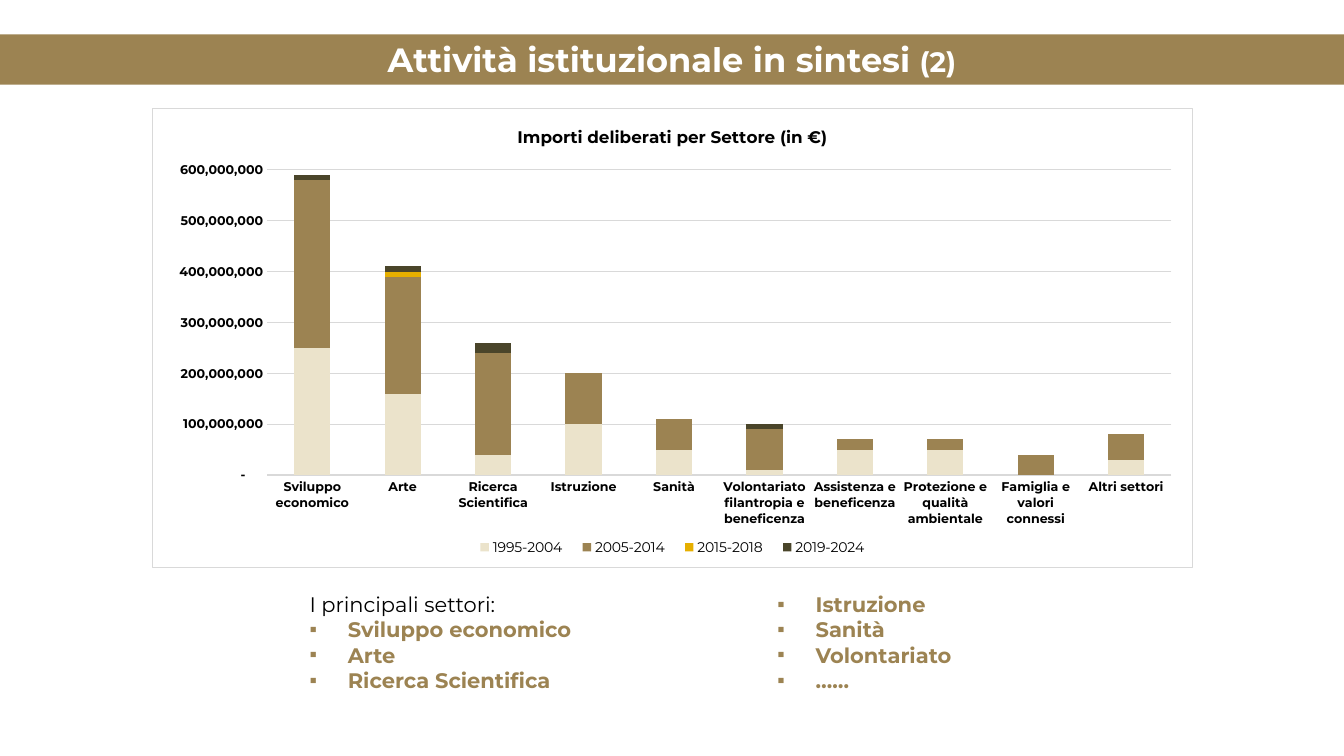
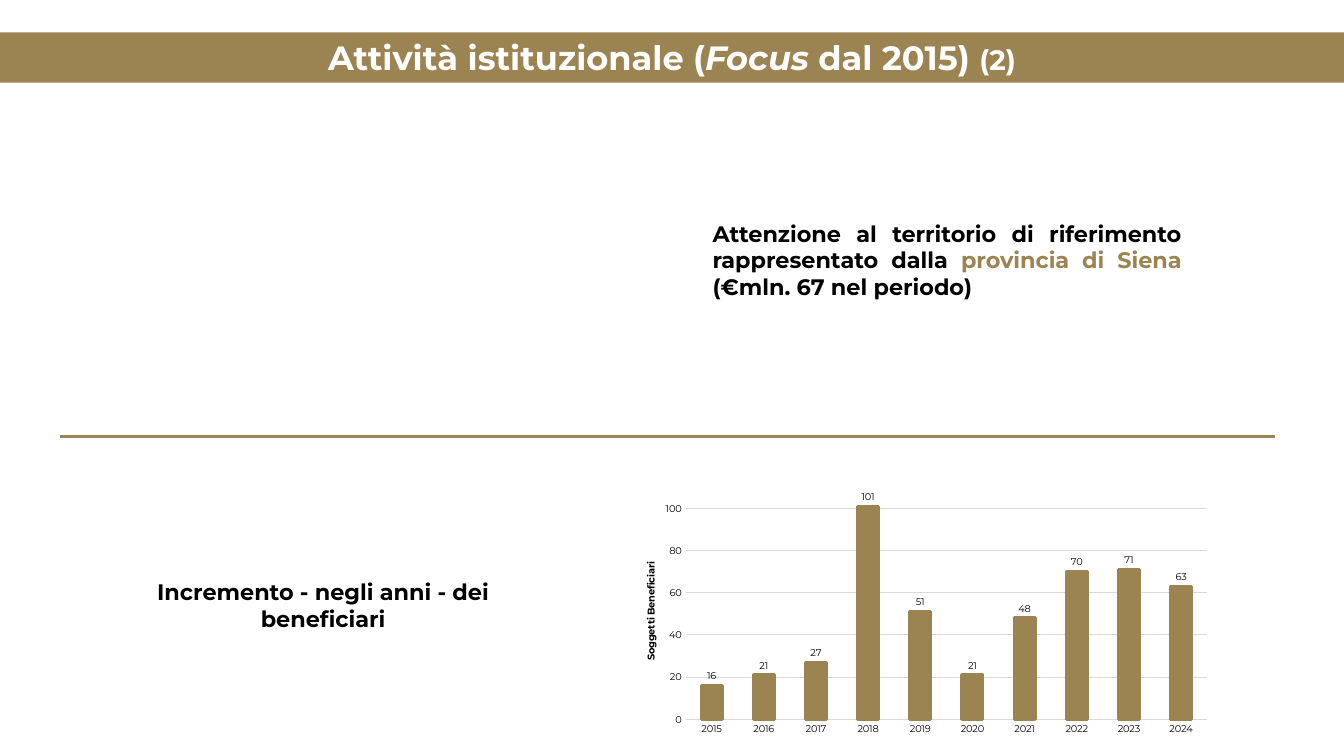
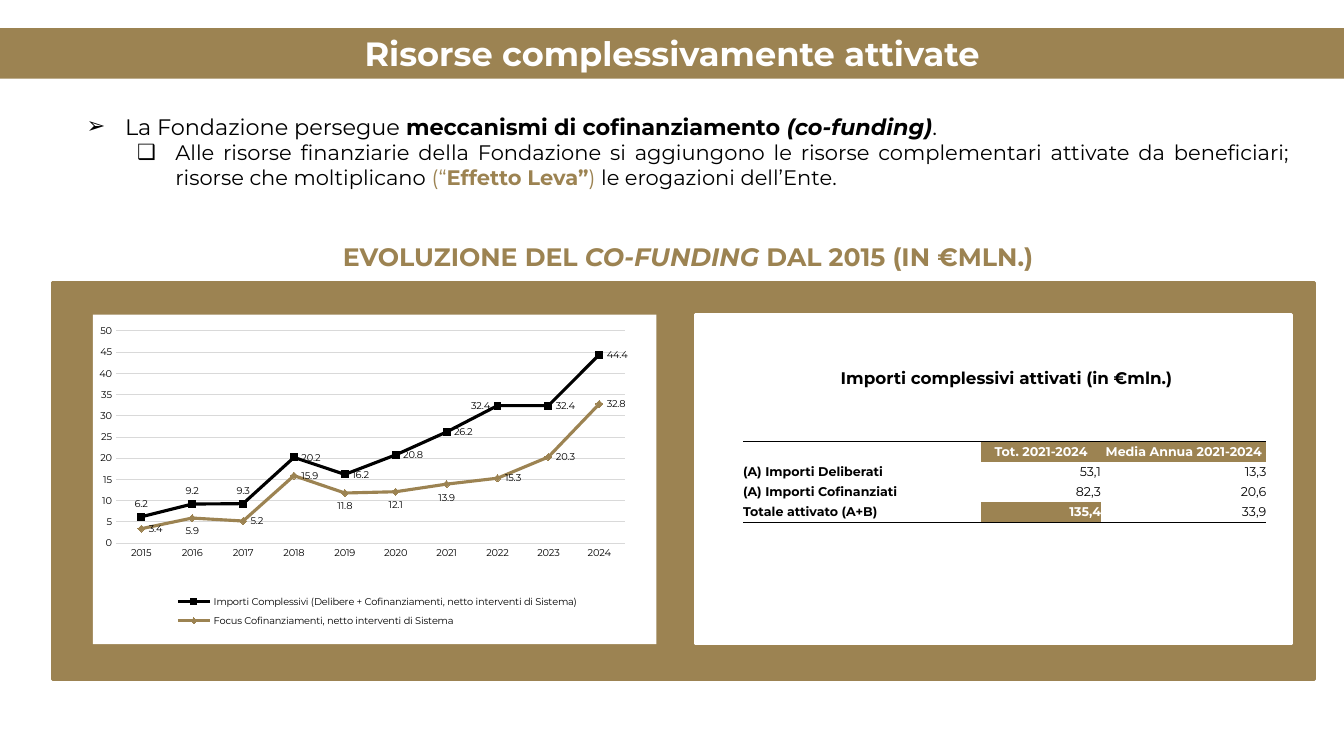
"""Build three slides on a foundation's grants, beneficiaries and co-funding."""
from lxml import etree
from pptx import Presentation
from pptx.chart.data import CategoryChartData
from pptx.dml.color import RGBColor
from pptx.enum.chart import XL_CHART_TYPE as Kind
from pptx.enum.chart import XL_LABEL_POSITION as Spot
from pptx.enum.chart import XL_LEGEND_POSITION as LegendSpot
from pptx.enum.chart import XL_MARKER_STYLE as Marker
from pptx.enum.chart import XL_TICK_MARK as Tick
from pptx.enum.shapes import MSO_CONNECTOR, MSO_SHAPE
from pptx.enum.text import MSO_ANCHOR as Anchor
from pptx.enum.text import MSO_AUTO_SIZE as AutoSize
from pptx.enum.text import PP_ALIGN as Align
from pptx.oxml import parse_xml
from pptx.oxml.ns import nsdecls, qn
from pptx.util import Inches, Pt

FONT = "Montserrat"
GOLD = RGBColor(0x9C, 0x83, 0x52)
CREAM = RGBColor(0xEB, 0xE3, 0xCB)
YELLOW = RGBColor(0xE6, 0xAF, 0x00)
DARK = RGBColor(0x4A, 0x45, 0x2A)
GREY = RGBColor(0xD9, 0xD9, 0xD9)
BLACK = RGBColor(0, 0, 0)
WHITE = RGBColor(0xFF, 0xFF, 0xFF)
YEARS = [str(year) for year in range(2015, 2025)]
PLAIN_TABLE = "{2D5ABB26-0587-4C30-8999-92F81FD0307C}"
LAYOUT = (
    "<c:layout %s><c:manualLayout>{target}"
    '<c:xMode val="edge"/><c:yMode val="edge"/><c:x val="{0}"/><c:y val="{1}"/>'
    '<c:w val="{2}"/><c:h val="{3}"/></c:manualLayout></c:layout>' % nsdecls("c")
)
INNER = '<c:layoutTarget val="inner"/>'
CHART_FILL = (
    '<c:spPr %s><a:solidFill><a:srgbClr val="FFFFFF"/></a:solidFill>'
    '<a:ln w="9525">{}</a:ln></c:spPr>' % nsdecls("c", "a")
)


def add_spans(para, size, spans):
    """Append runs given as text, colour, style letters and an optional size."""
    for text, colour, style, *other_size in spans:
        span = para.add_run()
        span.text = text
        span.font.name = FONT
        span.font.size = Pt(other_size[0] if other_size else size)
        span.font.color.rgb = colour
        span.font.bold = "b" in style
        span.font.italic = "i" in style


def add_styled_chart(page, kind, at, categories, series, size, plot_area, top, step, border="<a:noFill/>"):
    """Add a chart with the shared font, axes, gridlines and background."""
    data = CategoryChartData()
    data.categories = categories
    for name, values, _ in series:
        data.add_series(name, values)
    chart = page.shapes.add_chart(kind, *[Inches(n) for n in at], data).chart
    chart.has_title = False
    chart.has_legend = False
    chart.font.name = FONT
    chart.font.size = Pt(size)
    chart.font.color.rgb = BLACK
    chart.element.find(qn("c:chart")).addnext(parse_xml(CHART_FILL.format(border)))
    area = chart.element.find(".//" + qn("c:plotArea"))
    for old in area.findall(qn("c:layout")):
        area.remove(old)
    area.insert(0, parse_xml(LAYOUT.format(*plot_area, target=INNER)))
    for axis in (chart.category_axis, chart.value_axis):
        axis.major_tick_mark = Tick.NONE
        axis.minor_tick_mark = Tick.NONE
    chart.category_axis.format.line.color.rgb = GREY
    chart.category_axis.format.line.width = Pt(0.75)
    values_axis = chart.value_axis
    values_axis.minimum_scale = 0
    values_axis.maximum_scale = top
    values_axis.major_unit = step
    values_axis.format.line.fill.background()
    values_axis.major_gridlines.format.line.color.rgb = GREY
    values_axis.major_gridlines.format.line.width = Pt(0.75)
    values_axis.tick_labels.number_format = "#,##0"
    values_axis.tick_labels.number_format_is_linked = False
    chart.plots[0].vary_by_categories = False
    return chart


deck = Presentation()
deck.slide_width = Inches(13.33)
deck.slide_height = Inches(7.5)
sectors, focus, resources = [deck.slides.add_slide(deck.slide_layouts[n]) for n in (3, 5, 1)]

titles = [
    (sectors, 0.34, [("Attività istituzionale in sintesi ", WHITE, "b"), ("(2)", WHITE, "b", 20)]),
    (focus, 0.32, [
        ("Attività istituzionale (", WHITE, "b"), ("Focus", WHITE, "bi"),
        (" dal 2015) ", WHITE, "b"), ("(2)", WHITE, "b", 20),
    ]),
    (resources, 0.28, [("Risorse complessivamente attivate", WHITE, "b")]),
]
for page, top, spans in titles:
    band = page.shapes.title
    band.left, band.top, band.width, band.height = 0, Inches(top), deck.slide_width, Inches(0.5)
    band.fill.solid()
    band.fill.fore_color.rgb = GOLD
    band.text_frame.auto_size = AutoSize.NONE
    band.text_frame.vertical_anchor = Anchor.MIDDLE
    para = band.text_frame.paragraphs[0]
    para.alignment = Align.CENTER
    add_spans(para, 24, spans)

left_items = [("", 0, 15, [("I principali settori:", BLACK, "")])]
left_items += [("▪", 0, 15, [(name, GOLD, "b")]) for name in ("Sviluppo economico", "Arte", "Ricerca Scientifica")]
right_items = [("▪", 0, 15, [(name, GOLD, "b")]) for name in ("Istruzione", "Sanità", "Volontariato", "……")]
funding_items = [
    ("➢", 0, 16, [
        ("La Fondazione persegue ", BLACK, ""), ("meccanismi di cofinanziamento ", BLACK, "b"),
        ("(co-funding)", BLACK, "bi"), (".", BLACK, ""),
    ]),
    ("❑", 1, 15, [
        ("Alle risorse finanziarie della Fondazione si aggiungono le risorse complementari attivate "
         "da beneficiari; risorse che moltiplicano ", BLACK, ""),
        ("(“", GOLD, ""), ("Effetto Leva”", GOLD, "b"), (") ", GOLD, ""),
        ("le erogazioni dell’Ente.", BLACK, ""),
    ]),
]
sector_list = sectors.placeholders[1]
sector_list.fill.solid()
sector_list.fill.fore_color.rgb = WHITE
lists = [
    (sector_list, (2.97, 5.82, 5.35, 1.36), Align.LEFT, left_items),
    (sectors.placeholders[2], (7.61, 5.82, 5, 1.36), Align.LEFT, right_items),
    (resources.placeholders[1], (0.76, 1.07, 12.13, 0.88), Align.JUSTIFY, funding_items),
]
for box, at, align, items in lists:
    box.left, box.top, box.width, box.height = [Inches(n) for n in at]
    frame = box.text_frame
    frame.auto_size = AutoSize.NONE
    for index, (bullet, level, size, spans) in enumerate(items):
        para = frame.add_paragraph() if index else frame.paragraphs[0]
        para.level = level
        para.alignment = align
        para.space_before = Pt(0)
        props = para._p.get_or_add_pPr()
        if bullet:
            props.set("marL", str(Inches(0.38 + 0.5 * level)))
            props.set("indent", str(Inches(-0.38)))
            etree.SubElement(props, qn("a:buFont"), typeface="Arial")
            etree.SubElement(props, qn("a:buChar"), char=bullet)
        else:
            props.set("marL", "0")
            props.set("indent", "0")
            etree.SubElement(props, qn("a:buNone"))
        add_spans(para, size, spans)

panels = [((0.52, 2.8, 12.52, 3.94), GOLD), ((6.9, 3.12, 5.91, 3.27), WHITE)]
for at, colour in panels:
    panel = resources.shapes.add_shape(MSO_SHAPE.RECTANGLE, *[Inches(n) for n in at])
    panel.shadow.inherit = False
    panel.fill.solid()
    panel.fill.fore_color.rgb = colour
    panel.line.color.rgb = colour
    panel.line.width = Pt(2)

captions = [
    (focus, (6.97, 2.13, 4.85, 0.91), Align.JUSTIFY, 16, [
        ("Attenzione al territorio di riferimento rappresentato dalla ", BLACK, "b"),
        ("provincia di Siena ", GOLD, "b"), ("(€mln. 67 nel periodo)", BLACK, "b"),
    ]),
    (focus, (0.92, 5.69, 4.57, 0.64), Align.CENTER, 16, [("Incremento - negli anni - dei beneficiari", BLACK, "b")]),
    (resources, (1.39, 2.34, 10.87, 0.4), Align.CENTER, 18, [
        ("EVOLUZIONE DEL ", GOLD, "b"), ("CO-FUNDING", GOLD, "bi"), (" DAL 2015 (IN €MLN.)", GOLD, "b"),
    ]),
    (resources, (8.24, 3.6, 3.57, 0.3), Align.LEFT, 12, [("Importi complessivi attivati (in €mln.)", BLACK, "b")]),
]
for page, at, align, size, spans in captions:
    box = page.shapes.add_textbox(*[Inches(n) for n in at])
    box.text_frame.word_wrap = True
    para = box.text_frame.paragraphs[0]
    para.alignment = align
    add_spans(para, size, spans)

divider = focus.shapes.add_connector(
    MSO_CONNECTOR.STRAIGHT, Inches(0.6), Inches(4.33), Inches(12.65), Inches(4.33))
divider.line.color.rgb = GOLD
divider.line.width = Pt(2.5)
etree.SubElement(divider._element.spPr, qn("a:effectLst"))

TEN_MILLION = 10_000_000
sector_names = [
    "Sviluppo economico", "Arte", "Ricerca Scientifica", "Istruzione", "Sanità",
    "Volontariato filantropia e beneficenza", "Assistenza e beneficenza",
    "Protezione e qualità ambientale", "Famiglia e valori connessi", "Altri settori",
]
periods = [
    ("1995-2004", (25, 16, 4, 10, 5, 1, 5, 5, 0, 3), CREAM),
    ("2005-2014", (33, 23, 20, 10, 6, 8, 2, 2, 4, 5), GOLD),
    ("2015-2018", (0, 1, 0, 0, 0, 0, 0, 0, 0, 0), YELLOW),
    ("2019-2024", (1, 1, 2, 0, 0, 1, 0, 0, 0, 0), DARK),
]
amounts = [(name, [n * TEN_MILLION for n in values], colour) for name, values, colour in periods]
sector_chart = add_styled_chart(
    sectors, Kind.COLUMN_STACKED, (1.51, 1.07, 10.32, 4.57), sector_names, amounts, 10,
    (0.11, 0.134, 0.87, 0.664), 60 * TEN_MILLION, 10 * TEN_MILLION,
    '<a:solidFill><a:srgbClr val="D9D9D9"/></a:solidFill>')
sector_chart.has_title = True
add_spans(sector_chart.chart_title.text_frame.paragraphs[0], 12,
          [("Importi deliberati per Settore (in €)", BLACK, "b")])
sector_chart.chart_title.include_in_layout = False
sector_chart.value_axis.tick_labels.number_format = '#,##0;-#,##0;"-"??'
for axis in (sector_chart.category_axis, sector_chart.value_axis):
    axis.tick_labels.font.size = Pt(9)
    axis.tick_labels.font.bold = True
sector_chart.plots[0].gap_width = 150
sector_chart.plots[0].overlap = 100
for bars, (_, _, colour) in zip(sector_chart.series, amounts):
    bars.format.fill.solid()
    bars.format.fill.fore_color.rgb = colour

beneficiaries = [("Soggetti Beneficiari", (16, 21, 27, 101, 51, 21, 48, 70, 71, 63), GOLD)]
people_chart = add_styled_chart(
    focus, Kind.COLUMN_CLUSTERED, (6.37, 4.77, 5.73, 2.56), YEARS, beneficiaries, 7,
    (0.075, 0.025, 0.903, 0.9), 110, 20)
axis_title = people_chart.value_axis.axis_title
add_spans(axis_title.text_frame.paragraphs[0], 7, [("Soggetti Beneficiari", BLACK, "b")])
people_chart.plots[0].gap_width = 150
bars = people_chart.series[0]
bars.format.fill.solid()
bars.format.fill.fore_color.rgb = GOLD
bars.format.line.color.rgb = GOLD
bars.format.line.width = Pt(2.25)
bars.data_labels.show_value = True
bars.data_labels.position = Spot.OUTSIDE_END
bars.data_labels.font.size = Pt(7)
bars.data_labels.font.name = FONT

funding = [
    ("Importi Complessivi (Delibere + Cofinanziamenti, netto interventi di Sistema)",
     (6.2, 9.2, 9.3, 20.2, 16.2, 20.8, 26.2, 32.4, 32.4, 44.4), BLACK),
    ("Focus Cofinanziamenti, netto interventi di Sistema",
     (3.4, 5.9, 5.2, 15.9, 11.8, 12.1, 13.9, 15.3, 20.3, 32.8), GOLD),
]
funding_chart = add_styled_chart(
    resources, Kind.LINE_MARKERS, (0.92, 3.12, 5.59, 3.27), YEARS, funding, 7,
    (0.041, 0.05, 0.903, 0.644), 50, 5)
markers = [Marker.SQUARE, Marker.DIAMOND]
moved_labels = [
    {0: Spot.ABOVE, 1: Spot.ABOVE, 2: Spot.ABOVE, 7: Spot.LEFT},
    {n: Spot.BELOW for n in (1, 4, 5, 6)},
]
for trend, (_, _, colour), marker, moved in zip(funding_chart.series, funding, markers, moved_labels):
    trend.smooth = False
    trend.format.line.color.rgb = colour
    trend.format.line.width = Pt(2.25)
    trend.marker.style = marker
    trend.marker.size = 5
    trend.marker.format.fill.solid()
    trend.marker.format.fill.fore_color.rgb = colour
    trend.marker.format.line.color.rgb = colour
    labels = trend.data_labels
    labels.show_value = True
    labels.number_format = "0.0"
    labels.number_format_is_linked = False
    labels.position = Spot.RIGHT
    labels.font.size = Pt(7)
    labels.font.name = FONT
    for index, spot in moved.items():
        label = trend.points[index].data_label
        label.font.size = Pt(7)
        label.font.name = FONT
        label.position = spot

legends = [
    (sector_chart, LegendSpot.BOTTOM, (0.3, 0.93, 0.4, 0.05)),
    (funding_chart, LegendSpot.RIGHT, (0.13, 0.83, 0.75, 0.14)),
]
for chart, spot, area in legends:
    chart.has_legend = True
    legend = chart.legend
    legend.position = spot
    legend.include_in_layout = False
    for old in legend._element.findall(qn("c:layout")):
        legend._element.remove(old)
    legend._element.find(qn("c:legendPos")).addnext(parse_xml(LAYOUT.format(*area, target="")))

rows = [
    ("", "Tot. 2021-2024", "Media Annua 2021-2024"),
    ("(A) Importi Deliberati", "53,1", "13,3"),
    ("(A) Importi Cofinanziati", "82,3", "20,6"),
    ("Totale attivato (A+B)", "135,4", "33,9"),
]
filled = {(0, 1), (0, 2), (3, 1)}
borders = {0: "a:lnT", 3: "a:lnB"}
table = resources.shapes.add_table(
    4, 3, Inches(7.37), Inches(4.38), Inches(5.19), Inches(0.8)).table
table.first_row = False
table.horz_banding = False
table._tbl.tblPr.find(qn("a:tableStyleId")).text = PLAIN_TABLE
for column, width in zip(table.columns, (2.36, 1.19, 1.64)):
    column.width = Inches(width)
for r, texts in enumerate(rows):
    table.rows[r].height = Inches(0.2)
    for c, text in enumerate(texts):
        cell = table.cell(r, c)
        cell.margin_left = cell.margin_right = cell.margin_top = cell.margin_bottom = 0
        cell.vertical_anchor = Anchor.MIDDLE
        if r in borders:
            edge = etree.SubElement(cell._tc.get_or_add_tcPr(), qn(borders[r]), w=str(Pt(1)))
            paint = etree.SubElement(edge, qn("a:solidFill"))
            etree.SubElement(paint, qn("a:srgbClr"), val=str(BLACK))
        if (r, c) in filled:
            cell.fill.solid()
            cell.fill.fore_color.rgb = GOLD
        else:
            cell.fill.background()
        para = cell.text_frame.paragraphs[0]
        if text:
            para.alignment = Align.LEFT if c == 0 else Align.RIGHT if r else Align.CENTER
            bold = c == 0 or (r, c) in filled
            add_spans(para, 9, [(text, WHITE if (r, c) in filled else BLACK, "b" if bold else "")])
        else:
            etree.SubElement(para._p, qn("a:endParaRPr"), sz="900")

deck.save("out.pptx")
